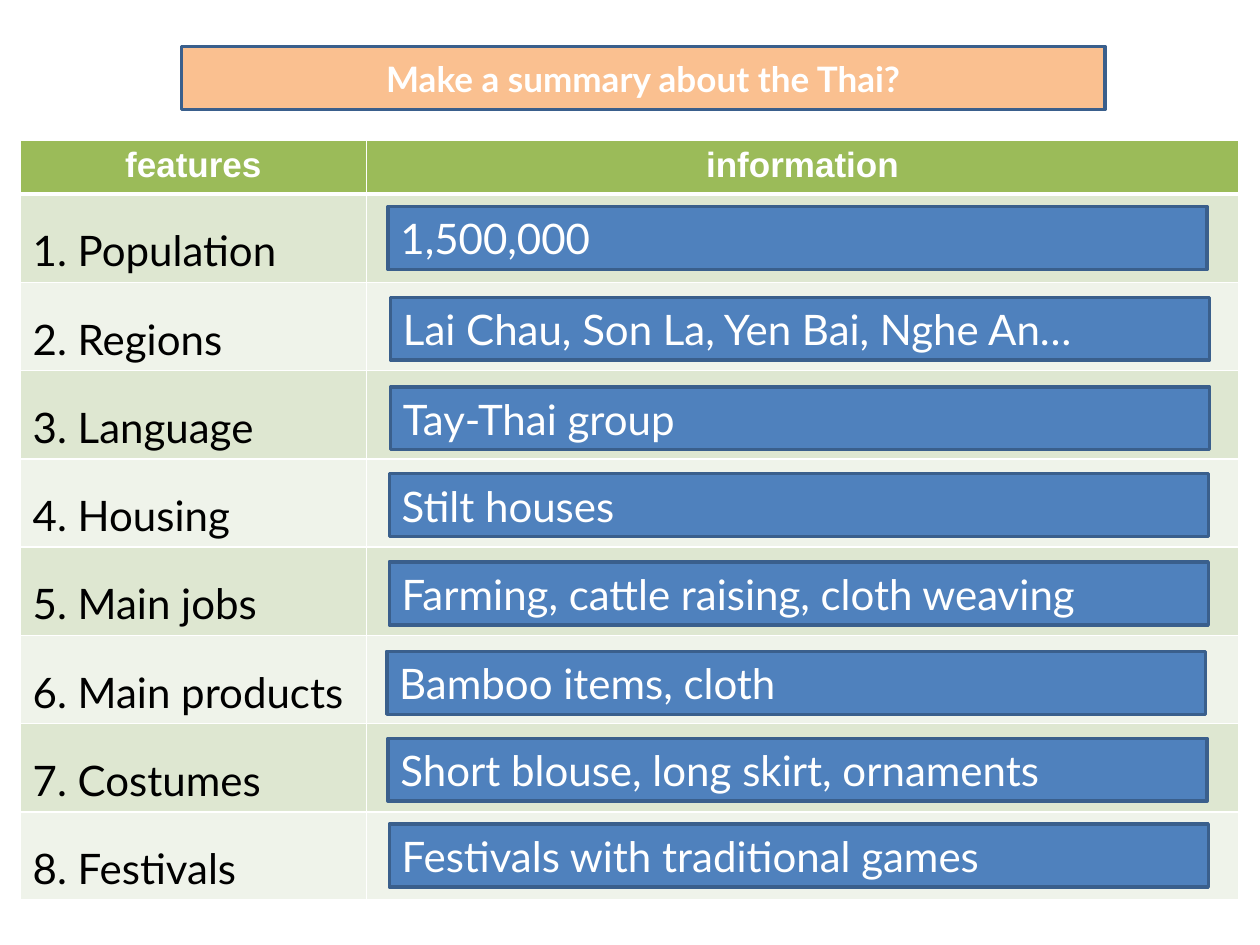
from lxml import etree
from pptx import Presentation
from pptx import util as u
from pptx.dml.color import RGBColor
from pptx.enum import shapes, text
from pptx.oxml import ns

HUES = {
    "white": "FFFFFF", "black": "000000", "head": "9BBB59",
    "odd": "DEE7D1", "even": "EFF3EA",
    "peach": "FAC090", "blue": "4F81BD", "edge": "3A5F8C",
}
HEAD = {"size": u.Pt(20), "name": "Arial", "bold": True}
TITLE = {"size": u.Pt(20), "name": "Lato", "bold": True}
BODY = {"size": u.Pt(24), "name": "Lato", "bold": False}

# Feature, answer, and left and top of the answer box
ROWS = [
    ("Population", "1,500,000", 3.08, 1.64),
    ("Regions", "Lai Chau, Son La, Yen Bai, Nghe An…", 3.1, 2.36),
    ("Language", "Tay-Thai group", 3.1, 3.07),
    ("Housing", "Stilt houses", 3.09, 3.76),
    ("Main jobs", "Farming, cattle raising, cloth weaving", 3.09, 4.46),
    ("Main products", "Bamboo items, cloth", 3.07, 5.17),
    ("Costumes", "Short blouse, long skirt, ornaments", 3.08, 5.86),
    ("Festivals", "Festivals with traditional games", 3.09, 6.54),
]


def rgb(hue):
    return RGBColor.from_string(HUES[hue])


def paint(item, hue):
    item.fill.solid()
    item.fill.fore_color.rgb = rgb(hue)


def write(frame, words, form, hue, align=text.PP_ALIGN.LEFT, lead=None):
    para = frame.paragraphs[0]
    para.alignment = align
    para.line_spacing = lead
    run = para.add_run()
    run.text = words
    for key, value in form.items():
        setattr(run.font, key, value)
    run.font.color.rgb = rgb(hue)


def rule(cell, top=1, base=1):
    """Draw white borders; they must come before the fill in the XML."""
    props = cell._tc.get_or_add_tcPr()
    sides = {"L": 1, "R": 1, "T": top, "B": base}
    for spot, (side, width) in enumerate(sides.items()):
        line = etree.Element(ns.qn("a:ln" + side), w=str(u.Pt(width)))
        fill = etree.SubElement(line, ns.qn("a:solidFill"))
        etree.SubElement(fill, ns.qn("a:srgbClr"), val=HUES["white"])
        props.insert(spot, line)


def add_grid(slide):
    frame = slide.shapes.add_table(
        len(ROWS) + 1, 2, u.Inches(0.16), u.Inches(1.11),
        u.Inches(9.67), u.Inches(6.03))
    grid = frame.table
    for col, width in zip(grid.columns, (2.75, 6.92)):
        col.width = u.Inches(width)
    for num, row in enumerate(grid.rows):
        row.height = u.Inches(0.7 if num else 0.43)
        hue = "head" if num == 0 else "odd" if num % 2 else "even"
        for cell in row.cells:
            paint(cell, hue)
            rule(cell, top=3 if num == 1 else 1, base=1 if num else 3)

    # Header and feature names
    for col, words in enumerate(("features", "information")):
        write(grid.cell(0, col).text_frame, words, HEAD, "white",
              text.PP_ALIGN.CENTER)
    for num, (name, *_) in enumerate(ROWS, 1):
        write(grid.cell(num, 0).text_frame, f"{num}. {name}", BODY, "black",
              lead=1.5)


def add_box(slide, words, left, top, width, hue, form,
            align=text.PP_ALIGN.LEFT):
    box = slide.shapes.add_shape(
        shapes.MSO_SHAPE.RECTANGLE, u.Inches(left), u.Inches(top),
        u.Inches(width), u.Inches(0.5))
    box.shadow.inherit = False
    paint(box, hue)
    box.line.color.rgb = rgb("edge")
    box.line.width = u.Pt(2)
    box.text_frame.word_wrap = True
    box.text_frame.vertical_anchor = text.MSO_ANCHOR.MIDDLE
    write(box.text_frame, words, form, "white", align)


def main():
    deck = Presentation()
    deck.slide_width, deck.slide_height = u.Inches(10), u.Inches(7.5)
    slide = deck.slides.add_slide(deck.slide_layouts[6])

    # Table, then the title and the answers over it
    add_grid(slide)
    add_box(slide, "Make a summary about the Thai?", 1.44, 0.37, 7.33,
            "peach", TITLE, text.PP_ALIGN.CENTER)
    for _, words, left, top in ROWS:
        add_box(slide, words, left, top, 6.5, "blue", BODY)

    deck.save("out.pptx")


if __name__ == "__main__":
    main()
